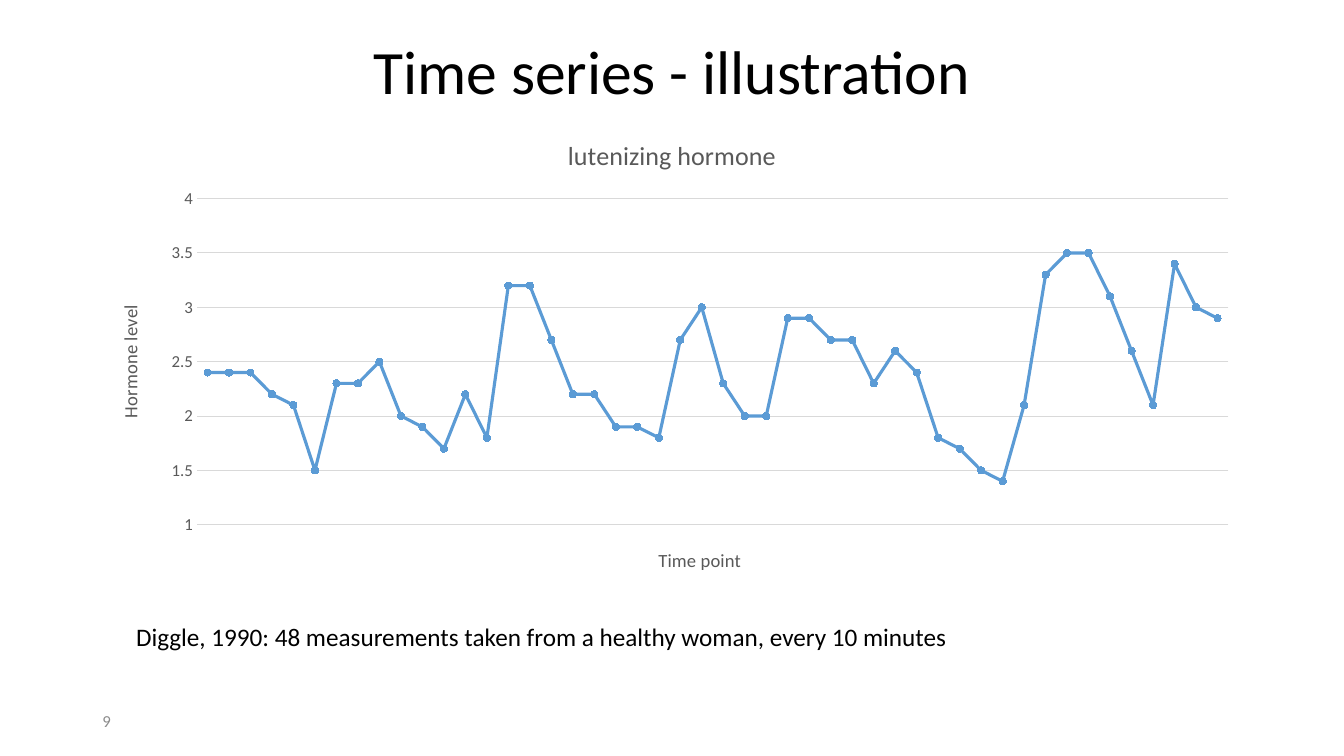
from dataclasses import dataclass

from lxml.etree import SubElement
from pptx import Presentation
from pptx.chart.data import CategoryChartData
from pptx.dml.color import RGBColor as Rgb
from pptx.enum.chart import XL_CHART_TYPE as ChartType
from pptx.enum.chart import XL_MARKER_STYLE as Marker
from pptx.enum.chart import XL_TICK_MARK as TickMark
from pptx.enum.text import MSO_ANCHOR as Anchor
from pptx.enum.text import PP_ALIGN as Align
from pptx.oxml.ns import qn
from pptx.util import Cm, Pt


@dataclass(frozen=True)
class Theme:
    face: str = "Calibri"
    ink: Rgb = Rgb(0, 0, 0)
    label: Rgb = Rgb(0x59, 0x59, 0x59)
    muted: Rgb = Rgb(0x8C, 0x8C, 0x8C)
    grid: Rgb = Rgb(0xD9, 0xD9, 0xD9)
    hormone: Rgb = Rgb(0x5B, 0x9B, 0xD5)
    heading_size: float = 44
    chart_title_size: float = 18.6
    axis_title_size: float = 13.3
    tick_size: float = 12
    source_size: float = 18
    number_size: float = 12


@dataclass(frozen=True)
class Box:
    left: float
    top: float
    width: float
    height: float

    def lengths(self) -> tuple:
        return Cm(self.left), Cm(self.top), Cm(self.width), Cm(self.height)


@dataclass(frozen=True)
class Caption:
    text: str
    box: Box
    size: float
    color: Rgb
    anchor: Anchor


THEME = Theme()
HEADING_BOX = Box(2.33, 0.03, 29.21, 3.68)
CHART_BOX = Box(2.33, 2.95, 29.21, 12.09)
PLOT_LAYOUT = {"x": 0.09, "y": 0.17, "w": 0.89, "h": 0.68}
HORMONE_LEVELS = [
    2.4, 2.4, 2.4, 2.2, 2.1, 1.5, 2.3, 2.3, 2.5, 2, 1.9, 1.7,
    2.2, 1.8, 3.2, 3.2, 2.7, 2.2, 2.2, 1.9, 1.9, 1.8, 2.7, 3,
    2.3, 2, 2, 2.9, 2.9, 2.7, 2.7, 2.3, 2.6, 2.4, 1.8, 1.7,
    1.5, 1.4, 2.1, 3.3, 3.5, 3.5, 3.1, 2.6, 2.1, 3.4, 3, 2.9,
]
CAPTIONS = [
    Caption(
        "Diggle, 1990: 48 measurements taken from a healthy woman, every 10 minutes",
        Box(3.18, 15.52, 28.52, 1.02), THEME.source_size, THEME.ink, Anchor.TOP,
    ),
    Caption("9", Box(2.33, 17.65, 7.62, 1.02), THEME.number_size, THEME.muted, Anchor.MIDDLE),
]


def style_font(font, size: float, color: Rgb, bold: bool = False) -> None:
    font.name = THEME.face
    font.size = Pt(size)
    font.bold = bold
    font.color.rgb = color


def add_heading(slide, text: str) -> None:
    heading = slide.shapes.title
    heading.left, heading.top, heading.width, heading.height = HEADING_BOX.lengths()
    heading.text_frame.text = text
    heading.text_frame.vertical_anchor = Anchor.MIDDLE
    line = heading.text_frame.paragraphs[0]
    line.alignment = Align.CENTER
    line.line_spacing = 0.9
    style_font(line.font, THEME.heading_size, THEME.ink)


def add_caption(slide, caption: Caption) -> None:
    frame = slide.shapes.add_textbox(*caption.box.lengths()).text_frame
    frame.word_wrap = True
    frame.vertical_anchor = caption.anchor
    frame.text = caption.text
    line = frame.paragraphs[0]
    line.alignment = Align.LEFT
    style_font(line.font, caption.size, caption.color)


def write_chart_text(title, text: str, size: float) -> None:
    title.text_frame.text = text
    style_font(title.text_frame.paragraphs[0].font, size, THEME.label)


def place_plot(chart) -> None:
    plot_area = chart.element.find(".//" + qn("c:plotArea"))
    for automatic in plot_area.findall(qn("c:layout")):
        plot_area.remove(automatic)
    layout = SubElement(plot_area, qn("c:layout"))
    plot_area.insert(0, layout)
    manual = SubElement(layout, qn("c:manualLayout"))
    settings = {"layoutTarget": "inner", "xMode": "edge", "yMode": "edge", **PLOT_LAYOUT}
    for tag, setting in settings.items():
        SubElement(manual, qn(f"c:{tag}")).set("val", str(setting))


def style_axes(chart) -> None:
    time_axis, level_axis = chart.category_axis, chart.value_axis
    write_chart_text(time_axis.axis_title, "Time point", THEME.axis_title_size)
    time_axis.visible = False

    write_chart_text(level_axis.axis_title, "Hormone level", THEME.axis_title_size)
    level_axis.axis_title.element.find(".//" + qn("a:bodyPr")).set("rot", "-5400000")
    level_axis.minimum_scale, level_axis.maximum_scale = 1, 4
    level_axis.major_unit = 0.5
    level_axis.major_tick_mark = level_axis.minor_tick_mark = TickMark.NONE
    level_axis.format.line.fill.background()
    level_axis.major_gridlines.format.line.color.rgb = THEME.grid
    level_axis.major_gridlines.format.line.width = Pt(0.75)
    style_font(level_axis.tick_labels.font, THEME.tick_size, THEME.label)


def style_hormone_line(series) -> None:
    series.smooth = False
    series.format.line.color.rgb = THEME.hormone
    series.format.line.width = Pt(2.25)
    series.marker.style = Marker.CIRCLE
    series.marker.size = 5
    series.marker.format.fill.solid()
    series.marker.format.fill.fore_color.rgb = THEME.hormone
    series.marker.format.line.color.rgb = THEME.hormone


def add_hormone_chart(slide) -> None:
    measurements = CategoryChartData()
    measurements.categories = [str(point + 1) for point in range(len(HORMONE_LEVELS))]
    measurements.add_series("lutenizing hormone", HORMONE_LEVELS)
    chart = slide.shapes.add_chart(
        ChartType.LINE_MARKERS, *CHART_BOX.lengths(), measurements
    ).chart
    style_font(chart.font, THEME.tick_size, THEME.label)
    chart.has_legend = False
    chart.plots[0].vary_by_categories = False
    write_chart_text(chart.chart_title, "lutenizing hormone", THEME.chart_title_size)
    style_axes(chart)
    style_hormone_line(chart.plots[0].series[0])
    place_plot(chart)


def main() -> None:
    deck = Presentation()
    deck.slide_width, deck.slide_height = Cm(33.87), Cm(19.05)
    slide = deck.slides.add_slide(deck.slide_layouts[5])
    add_heading(slide, "Time series - illustration")
    add_hormone_chart(slide)
    for caption in CAPTIONS:
        add_caption(slide, caption)
    deck.save("out.pptx")


if __name__ == "__main__":
    main()
